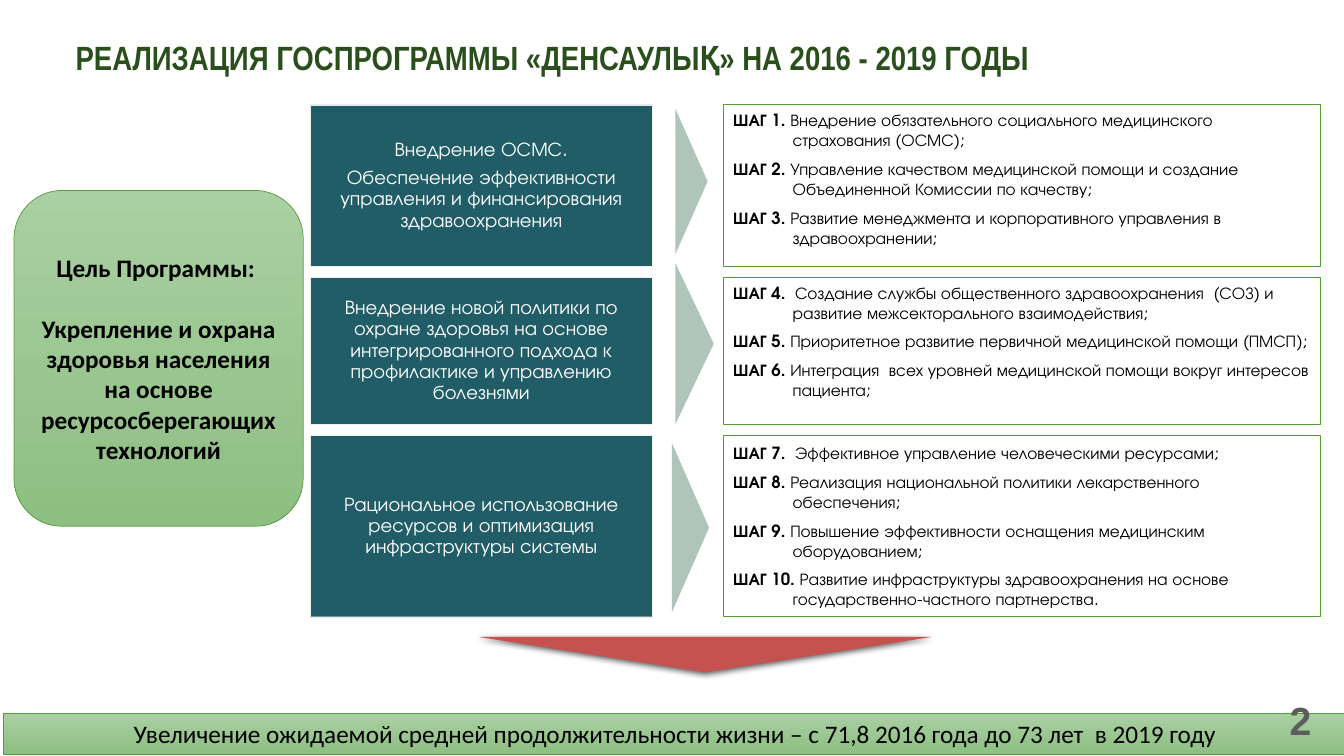
from dataclasses import dataclass
from typing import NamedTuple

from lxml import etree
from pptx import Presentation
from pptx.dml.color import RGBColor
from pptx.enum.shapes import MSO_SHAPE as Shp
from pptx.enum.text import MSO_ANCHOR as Anchor, MSO_AUTO_SIZE as AutoSize, PP_ALIGN as Align
from pptx.oxml import parse_xml
from pptx.oxml.ns import nsdecls, qn
from pptx.util import Pt

WHITE = RGBColor(0xFF, 0xFF, 0xFF)
BLACK = RGBColor(0x00, 0x00, 0x00)
GREY = RGBColor(0x5D, 0x5D, 0x5D)
TEAL = RGBColor(0x21, 0x5D, 0x66)
PALE = RGBColor(0xEB, 0xF0, 0xED)
SAGE = RGBColor(0xAF, 0xC5, 0xB9)
GREEN = RGBColor(0x54, 0x9E, 0x39)
DARK_GREEN = RGBColor(0x2A, 0x4F, 0x1C)
LIGHT_TOP = RGBColor(0xAA, 0xCF, 0xA2)
LIGHT_BOTTOM = RGBColor(0x8D, 0xBF, 0x82)
RED = RGBColor(0xC4, 0x53, 0x4F)

ADVENTOR = "TeX Gyre Adventor"
ACTION_LEFT, ACTION_WIDTH = 221.6, 244.4
STEPS_LEFT, STEPS_WIDTH = 516.5, 427
HANGING = Pt(42.5)


class Box(NamedTuple):
    left: float
    top: float
    width: float
    height: float


class Step(NamedTuple):
    label: str
    text: str


@dataclass
class Direction:
    top: float
    height: float
    actions: list[str]
    arrow: Box  # frame before rotation
    holder: int  # index of the body placeholder
    anchor: Anchor
    steps: list[Step]


DIRECTIONS = [
    Direction(74.9, 115.2,
              ["Внедрение ОСМС.",
               "Обеспечение эффективности управления и финансирования здравоохранения"],
              Box(442.1, 118.1, 103.7, 23), 1, Anchor.TOP, [
                  Step("ШАГ 1. ", "Внедрение обязательного социального медицинского страхования (ОСМС);"),
                  Step("ШАГ 2. ", "Управление качеством медицинской помощи и создание "
                                  "Объединенной Комиссии по качеству;"),
                  Step("ШАГ 3. ", "Развитие менеджмента и корпоративного управления в здравоохранении;"),
              ]),
    Direction(198, 105.1,
              ["Внедрение новой политики по охране здоровья на основе интегрированного "
               "подхода к профилактике и управлению болезнями"],
              Box(438.5, 231.8, 115.2, 27.4), 2, Anchor.TOP, [
                  Step("ШАГ 4.  ", "Создание службы общественного здравоохранения  (СОЗ) и "
                                   "развитие межсекторального взаимодействия;"),
                  Step("ШАГ 5. ", "Приоритетное развитие первичной медицинской помощи (ПМСП);"),
                  Step("ШАГ 6. ", "Интеграция  всех уровней медицинской помощи вокруг интересов пациента;"),
              ]),
    Direction(311, 129.6,
              ["Рациональное использование ресурсов и оптимизация инфраструктуры системы"],
              Box(432.7, 363.6, 121, 26.6), 3, Anchor.MIDDLE, [
                  Step("ШАГ 7.  ", "Эффективное управление человеческими ресурсами;"),
                  Step("ШАГ 8. ", "Реализация национальной политики лекарственного обеспечения;"),
                  Step("ШАГ 9. ", "Повышение эффективности оснащения медицинским оборудованием;"),
                  Step("ШАГ 10. ", "Развитие инфраструктуры здравоохранения на основе "
                                   "государственно-частного партнерства."),
              ]),
]


def place(sp, box: Box) -> None:
    sp.left, sp.top, sp.width, sp.height = (Pt(v) for v in box)


def style_run(r, font: str, size: float, color: RGBColor, bold: bool = False) -> None:
    r.font.name, r.font.size, r.font.bold = font, Pt(size), bold
    r.font.color.rgb = color


def prepare(tf, anchor: Anchor) -> None:
    tf.word_wrap = True
    tf.auto_size = AutoSize.NONE
    tf.vertical_anchor = anchor


def write(sp, lines: list[str], font: str, size: float, color: RGBColor,
          bold: bool = False, align: Align = Align.CENTER) -> None:
    tf = sp.text_frame
    prepare(tf, Anchor.MIDDLE)
    tf.text = "\n".join(lines)
    for p in tf.paragraphs:
        p.alignment = align
        for r in p.runs:
            style_run(r, font, size, color, bold)


def add_shape(s, kind: Shp, box: Box, fill: RGBColor | None = None,
              line: RGBColor | None = None, line_width: float = 0.5, rotation: float = 0):
    """Add a shape; without a fill colour it gets the light green gradient."""
    sp = s.shapes.add_shape(kind, *(Pt(v) for v in box))
    sp.shadow.inherit = False
    sp.rotation = rotation
    if fill is None:
        sp.fill.gradient()
        sp.fill.gradient_angle = 270
        for stop, color in zip(sp.fill.gradient_stops, (LIGHT_TOP, LIGHT_BOTTOM)):
            stop.color.rgb = color
    else:
        sp.fill.solid()
        sp.fill.fore_color.rgb = fill
    if line is None:
        sp.line.fill.background()
    else:
        sp.line.color.rgb = line
        sp.line.width = Pt(line_width)
    return sp


def add_steps(s, d: Direction) -> None:
    sp = s.placeholders[d.holder]
    place(sp, Box(STEPS_LEFT, d.top, STEPS_WIDTH, d.height))
    sp.line.color.rgb = GREEN
    sp.line.width = Pt(0.75)
    tf = sp.text_frame
    prepare(tf, d.anchor)
    for i, step in enumerate(d.steps):
        p = tf.paragraphs[0] if i == 0 else tf.add_paragraph()
        p.text = step.label
        p.add_run().text = step.text
        p.alignment = Align.LEFT
        p.space_before = p.space_after = Pt(3)
        for r, bold in zip(p.runs, (True, False)):
            style_run(r, ADVENTOR, 12, BLACK, bold)
        pPr = p._p.get_or_add_pPr()
        pPr.set("marL", str(HANGING))
        pPr.set("indent", str(-HANGING))
        etree.SubElement(pPr, qn("a:buNone"))


def add_direction(s, d: Direction) -> None:
    sp = add_shape(s, Shp.RECTANGLE, Box(ACTION_LEFT, d.top, ACTION_WIDTH, d.height), TEAL, PALE, 0.25)
    write(sp, d.actions, ADVENTOR, 14, WHITE)
    for p in sp.text_frame.paragraphs:
        p.line_spacing = 0.9
        p.space_after = Pt(5)
    add_shape(s, Shp.ISOSCELES_TRIANGLE, d.arrow, SAGE, rotation=90)
    add_steps(s, d)


def main() -> None:
    prs = Presentation()
    prs.slide_width, prs.slide_height = Pt(960), Pt(540)
    s = prs.slides.add_slide(prs.slide_layouts[4])

    # Title
    title = s.shapes.title
    place(title, Box(50.4, 19.4, 796, 43.2))
    write(title, ["РЕАЛИЗАЦИЯ ГОСПРОГРАММЫ «ДЕНСАУЛЫҚ» НА 2016 - 2019 ГОДЫ"],
          "Arial Narrow", 24, DARK_GREEN, True, Align.LEFT)
    title.text_frame.margin_left = title.text_frame.margin_right = Pt(3.6)

    # Directions with their steps
    for d in DIRECTIONS:
        add_direction(s, d)
    spare = s.placeholders[4].element
    spare.getparent().remove(spare)

    # Programme goal
    goal = add_shape(s, Shp.ROUNDED_RECTANGLE, Box(10, 136.1, 206.6, 239.8), line=GREEN)
    write(goal, ["Цель Программы: ",
                 "Укрепление и охрана здоровья населения на основе ресурсосберегающих технологий"],
          "Calibri", 18, BLACK, True)
    goal.text_frame.paragraphs[0].space_after = Pt(22)

    # Expected result
    result = add_shape(s, Shp.RECTANGLE, Box(2.2, 509.8, 960, 28.8), line=GREEN)
    write(result, ["Увеличение ожидаемой средней продолжительности жизни – "
                   "с 71,8 2016 года до 73 лет  в 2019 году"], "Calibri", 18, BLACK)
    pointer = add_shape(s, Shp.ISOSCELES_TRIANGLE, Box(342, 455, 323.3, 25.2), RED, rotation=180)
    effects = pointer._element.spPr.find(qn("a:effectLst"))
    effects.append(parse_xml(
        f'<a:outerShdw {nsdecls("a")} blurRad="{Pt(4.5)}" dist="{Pt(1.5)}" dir="5400000" rotWithShape="0">'
        '<a:srgbClr val="000000"><a:alpha val="63000"/></a:srgbClr></a:outerShdw>'))

    # Slide number
    number = s.shapes.add_textbox(*(Pt(v) for v in Box(727.9, 499.7, 216, 28.8)))
    write(number, ["2"], "Arial", 28, GREY, True, Align.RIGHT)

    prs.save("out.pptx")


if __name__ == "__main__":
    main()
